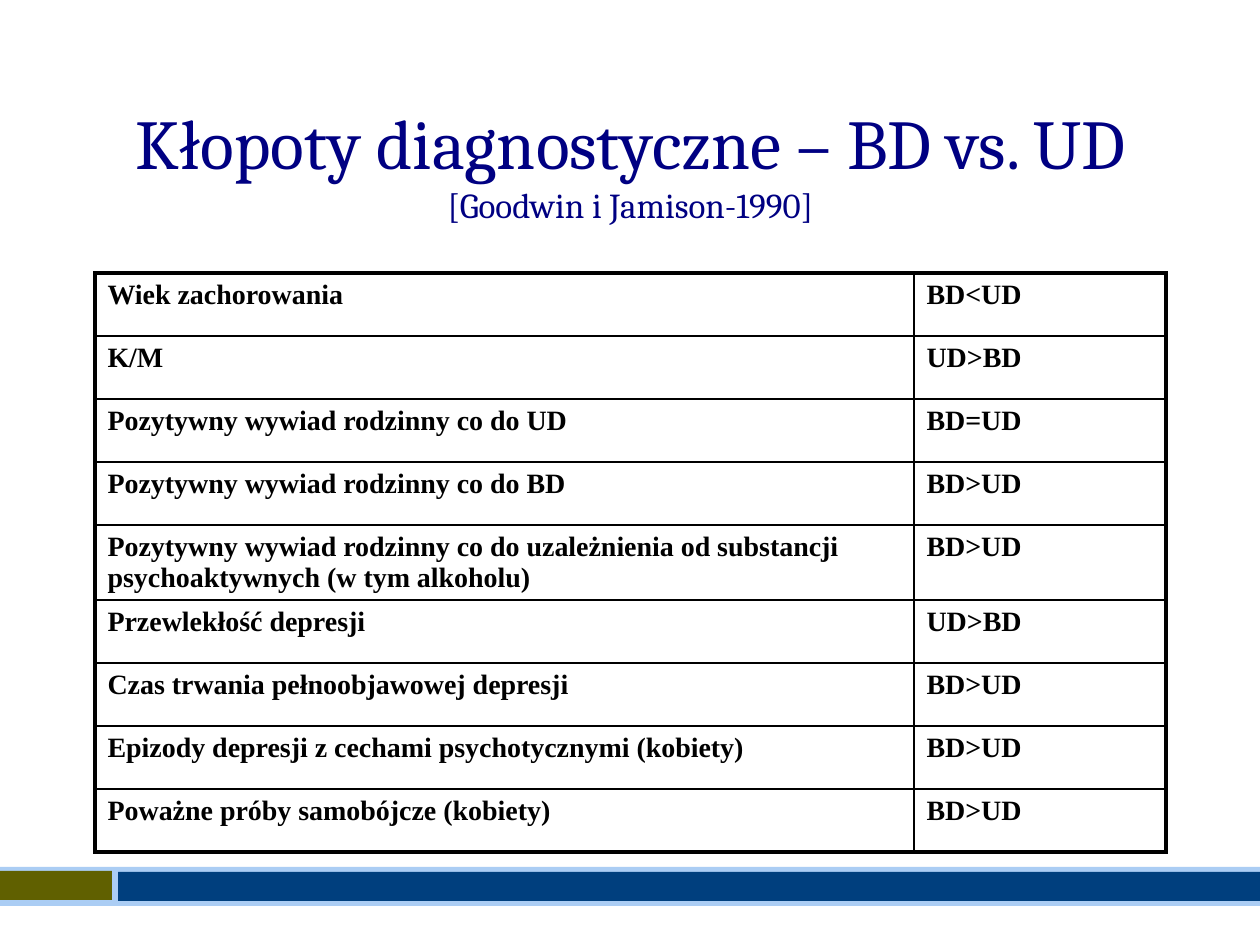
import pptx
import pptx.dml.color
import pptx.enum.shapes
import pptx.enum.text
import pptx.oxml
import pptx.oxml.ns
import pptx.util

# Content
TITLE = [("Kłopoty diagnostyczne – BD vs. UD", 40), ("[Goodwin i Jamison-1990]", 20)]
ROWS = [
    ("Wiek zachorowania", "BD<UD"),
    ("K/M", "UD>BD"),
    ("Pozytywny wywiad rodzinny co do UD", "BD=UD"),
    ("Pozytywny wywiad rodzinny co do BD", "BD>UD"),
    ("Pozytywny wywiad rodzinny co do uzależnienia od substancji "
     "psychoaktywnych (w tym alkoholu)", "BD>UD"),
    ("Przewlekłość depresji", "UD>BD"),
    ("Czas trwania pełnoobjawowej depresji", "BD>UD"),
    ("Epizody depresji z cechami psychotycznymi (kobiety)", "BD>UD"),
    ("Poważne próby samobójcze (kobiety)", "BD>UD"),
]
# Footer bars: left, top, width, height in px, colour
BARS = [
    ((0, 867, 1260, 39), "ABCDF4"),
    ((0, 871, 112, 29), "606000"),
    ((118, 872, 1142, 29), "003F7E"),
]
TITLE_BOX = (95, 84, 1071, 158)
TABLE_LEFT, TABLE_TOP, ROW_HEIGHT = 95, 273, 63
COLUMN_WIDTHS = [819, 252]
OUTER_LINE, INNER_LINE = 2.25, 1


def px(value):
    return pptx.util.Emu(round(value * 914400 / 126))


def colour(value):
    return pptx.dml.color.RGBColor.from_string(value)


def add_span(para, text, size, font, shade, bold=False):
    span = para.add_run()
    span.text = text
    span.font.size = pptx.util.Pt(size)
    span.font.name = font
    span.font.bold = bold
    span.font.color.rgb = colour(shade)


def set_borders(cell, widths):
    """Draw black borders; widths run left, right, top, bottom in points."""
    properties = cell._tc.get_or_add_tcPr()
    for position, (side, width) in enumerate(zip("LRTB", widths)):
        properties.insert(position, pptx.oxml.parse_xml(
            f'<a:ln{side} {pptx.oxml.ns.nsdecls("a")} w="{pptx.util.Pt(width)}">'
            '<a:solidFill><a:srgbClr val="000000"/></a:solidFill>'
            f'</a:ln{side}>'))


deck = pptx.Presentation()
deck.slide_width, deck.slide_height = px(1260), px(945)
page = deck.slides.add_slide(deck.slide_layouts[5])

# Footer bars
for place, shade in BARS:
    bar = page.shapes.add_shape(
        pptx.enum.shapes.MSO_SHAPE.RECTANGLE, *map(px, place))
    bar.shadow.inherit = False
    bar.fill.solid()
    bar.fill.fore_color.rgb = colour(shade)
    bar.line.fill.background()

# Title
title = page.shapes.title
title.left, title.top, title.width, title.height = map(px, TITLE_BOX)
title.text_frame.word_wrap = True
title.text_frame.auto_size = pptx.enum.text.MSO_AUTO_SIZE.NONE
title.text_frame.vertical_anchor = pptx.enum.text.MSO_ANCHOR.MIDDLE
para = title.text_frame.paragraphs[0]
para.alignment = pptx.enum.text.PP_ALIGN.CENTER
for index, (text, size) in enumerate(TITLE):
    if index:
        para.add_line_break()
    add_span(para, text, size, "Cambria", "000082")

# Comparison table
table = page.shapes.add_table(
    len(ROWS), len(COLUMN_WIDTHS), px(TABLE_LEFT), px(TABLE_TOP),
    px(sum(COLUMN_WIDTHS)), px(ROW_HEIGHT * len(ROWS))).table
table.first_row = table.horz_banding = False
for column, width in zip(table.columns, COLUMN_WIDTHS):
    column.width = px(width)
last_row, last_column = len(ROWS) - 1, len(COLUMN_WIDTHS) - 1
for r, texts in enumerate(ROWS):
    table.rows[r].height = px(ROW_HEIGHT)
    for c, text in enumerate(texts):
        cell = table.cell(r, c)
        cell.fill.background()
        add_span(cell.text_frame.paragraphs[0], text, 16,
                 "Times New Roman", "000000", bold=True)
        at_edge = (c == 0, c == last_column, r == 0, r == last_row)
        set_borders(cell, [OUTER_LINE if edge else INNER_LINE for edge in at_edge])

deck.save("out.pptx")
